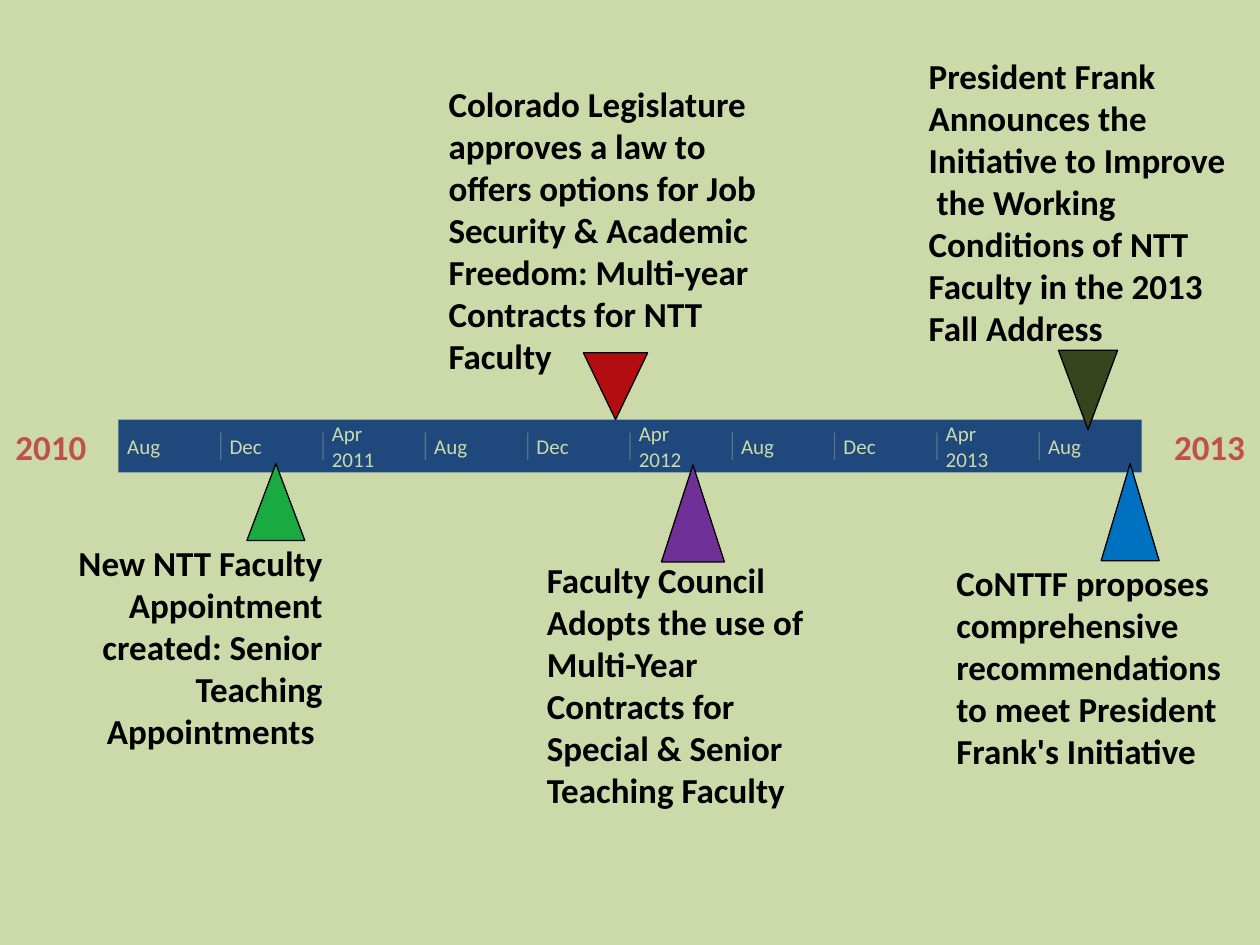
import pptx
import pptx.util
import pptx.dml.color
import pptx.enum.shapes
import pptx.enum.text
import pptx.oxml
import pptx.oxml.ns
from lxml import etree

COLOURS = {
    "background": "CCDAAA", "bar": "1F497D", "year": "C0504D", "ink": "000000",
    "red": "B20E12", "olive": "38441D", "green": "1AAA42",
    "purple": "6F3198", "blue": "0070C0",
}
ALIGN = pptx.enum.text.PP_ALIGN
SHAPES = pptx.enum.shapes.MSO_SHAPE
FIT = pptx.enum.text.MSO_AUTO_SIZE

# The slide is a grid of 100 columns by 75 rows; boxes are (left, top, width, height).
SLIDE_WIDTH, SLIDE_HEIGHT = pptx.util.Inches(10), pptx.util.Inches(7.5)
COLUMN, ROW = SLIDE_WIDTH / 100, SLIDE_HEIGHT / 75

BAR = (9.4, 33.3, 81.2, 4.2)
MONTHS = ["Aug", "Dec", "Apr\n2011", "Aug", "Dec", "Apr\n2012",
          "Aug", "Dec", "Apr\n2013", "Aug"]
YEARS = [("2010", (0, 33.7, 8.1, 3.4)), ("2013", (92, 33.7, 8, 3.4))]

# Wording, text box, alignment, marker box, marker colour, marker points down
MILESTONES = [
    ("Colorado Legislature approves a law to offers options for Job Security & "
     "Academic Freedom: Multi-year Contracts for NTT Faculty",
     (35.6, 6.4, 26.8, 23.6), ALIGN.LEFT, (46.3, 28, 5.1, 5.3), "red", True),
    ("President Frank Announces the Initiative to Improve  the Working "
     "Conditions of NTT Faculty in the 2013 Fall Address",
     (73.7, 4.2, 23.8, 23.6), ALIGN.LEFT, (84, 27.8, 4.7, 6.3), "olive", True),
    ("New NTT Faculty Appointment created: Senior Teaching Appointments ",
     (0.2, 42.9, 25.4, 16.8), ALIGN.RIGHT, (19.6, 36.8, 4.6, 6.1), "green", False),
    ("Faculty Council Adopts the use of Multi-Year Contracts for Special & "
     "Senior Teaching Faculty",
     (43.4, 44.2, 21.8, 20.2), ALIGN.LEFT, (52.5, 36.9, 5, 7.7), "purple", False),
    ("CoNTTF proposes comprehensive recommendations to meet President "
     "Frank's Initiative",
     (75.9, 44.5, 23.8, 16.8), ALIGN.LEFT, (87.4, 36.8, 4.6, 7.7), "blue", False),
]


def colour(name):
    return pptx.dml.color.RGBColor.from_string(COLOURS[name])


def on_grid(box):
    left, top, width, height = box
    return [round(size) for size in
            (left * COLUMN, top * ROW, width * COLUMN, height * ROW)]


def add_label(slide, wording, box, ink, size=20, bold=True,
              align=ALIGN.LEFT, auto_size=FIT.SHAPE_TO_FIT_TEXT):
    frame = slide.shapes.add_textbox(*on_grid(box)).text_frame
    layout = {"margin_left": 0, "margin_top": 0, "margin_right": 0,
              "margin_bottom": 0, "word_wrap": True, "auto_size": auto_size,
              "vertical_anchor": pptx.enum.text.MSO_ANCHOR.MIDDLE}
    for setting, value in layout.items():
        setattr(frame, setting, value)
    paragraph = frame.paragraphs[0]
    paragraph.text = wording
    paragraph.alignment = align
    style = {"name": "Calibri", "size": pptx.util.Pt(size), "bold": bold}
    for run in paragraph.runs:
        for setting, value in style.items():
            setattr(run.font, setting, value)
        run.font.color.rgb = colour(ink)


def add_filled_shape(slide, kind, box, fill):
    shape = slide.shapes.add_shape(kind, *on_grid(box))
    shape.shadow.inherit = False
    shape.fill.solid()
    shape.fill.fore_color.rgb = colour(fill)
    return shape


def add_divider(slide, x, top, bottom):
    """Draw a thin vertical line at 30 % opacity."""
    start_x, start_y, _, length = on_grid((x, top, 0, bottom - top))
    divider = slide.shapes.add_connector(
        pptx.enum.shapes.MSO_CONNECTOR.STRAIGHT,
        start_x, start_y, start_x, start_y + length)
    divider.line.width = pptx.util.Pt(0.75)
    divider.line.color.rgb = colour("background")
    qn = pptx.oxml.ns.qn
    properties = divider._element.spPr
    tint = properties.find(".//" + qn("a:srgbClr"))
    etree.SubElement(tint, qn("a:alpha"), val="30000")
    etree.SubElement(properties, qn("a:effectLst"))


def add_month_bar(slide, box):
    left, top, width, height = box
    add_filled_shape(slide, SHAPES.RECTANGLE, box, "bar").line.fill.background()
    pitch = width / len(MONTHS)
    for index, month in enumerate(MONTHS):
        x = left + index * pitch
        if index:
            add_divider(slide, x, top + height * 0.24, top + height * 0.76)
        label_width, label_height = (3.6, 2.8) if "\n" in month else (2.8, 2)
        label_top = top + (height - label_height) / 2
        add_label(slide, month, (x + 0.7, label_top, label_width, label_height),
                  "background", size=12, bold=False, auto_size=FIT.NONE)


def add_milestone(slide, wording, text_box, align, marker_box, fill, points_down):
    add_label(slide, wording, text_box, "ink", align=align)
    marker = add_filled_shape(slide, SHAPES.ISOSCELES_TRIANGLE, marker_box, fill)
    marker.line.color.rgb = colour("ink")
    marker.line.width = pptx.util.Pt(0.75)
    if points_down:
        marker.rotation = 180


def main():
    deck = pptx.Presentation()
    deck.slide_width, deck.slide_height = SLIDE_WIDTH, SLIDE_HEIGHT
    slide = deck.slides.add_slide(deck.slide_layouts[6])
    slide.background.fill.solid()
    slide.background.fill.fore_color.rgb = colour("background")
    for year, box in YEARS:
        add_label(slide, year, box, "year", align=ALIGN.CENTER)
    add_month_bar(slide, BAR)
    for milestone in MILESTONES:
        add_milestone(slide, *milestone)
    deck.save("out.pptx")


if __name__ == "__main__":
    main()
